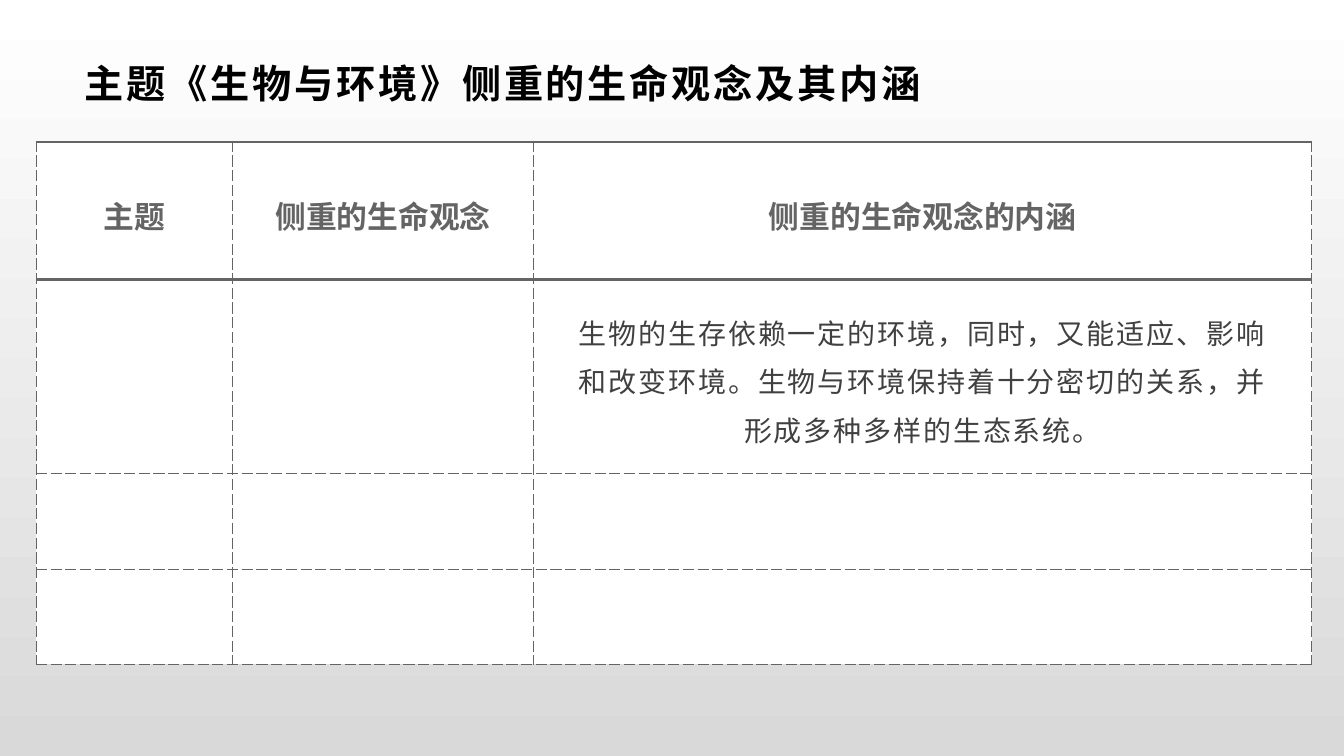
from lxml.etree import SubElement
from pptx import Presentation
from pptx.dml.color import RGBColor
from pptx.enum.text import MSO_ANCHOR as Anchor, MSO_AUTO_SIZE as AutoSize, PP_ALIGN as Align
from pptx.oxml.ns import qn
from pptx.util import Inches, Pt

# Content
TITLE = "主题《生物与环境》侧重的生命观念及其内涵"
ROWS = [
    ("主题", "侧重的生命观念", "侧重的生命观念的内涵"),
    ("", "", "生物的生存依赖一定的环境，同时，又能适应、影响和改变环境。"
             "生物与环境保持着十分密切的关系，并形成多种多样的生态系统。"),
    ("", "", ""),
    ("", "", ""),
]
COLUMN_WIDTHS = [1.95, 2.98, 7.72]
ROW_HEIGHTS = [1.36, 1.92, 0.95, 0.94]
TABLE_LEFT, TABLE_TOP = 0.36, 1.41

# Format
CJK_FONT = "Noto Sans CJK SC"
GRID = "646464"
THIN, THICK = (0.75, "dash"), (2.25, "solid")
HEADER_FORMAT = dict(size=22, color=GRID, bold=True, align=Align.CENTER, line_spacing=1.2)
BODY_FORMAT = dict(size=20, color="404040", spacing=1.3, align=Align.CENTER, line_spacing=1.2)


def rgb(color):
    return RGBColor.from_string(color)


def write(frame, text, *, size, color, font=CJK_FONT, bold=False, spacing=0,
          align=Align.LEFT, line_spacing=None):
    paragraph = frame.paragraphs[0]
    paragraph.alignment = align
    paragraph.line_spacing = line_spacing
    run = paragraph.add_run()
    run.text = text
    run.font.size = Pt(size)
    run.font.bold = bold
    run.font.color.rgb = rgb(color)
    run.font.name = font
    properties = run.font._element
    properties.set("spc", str(round(spacing * 100)))
    SubElement(properties, qn("a:ea")).set("typeface", CJK_FONT)


def set_margins(target, horizontal, vertical):
    target.margin_left = target.margin_right = Inches(horizontal)
    target.margin_top = target.margin_bottom = Inches(vertical)


def draw_border(cell, side, width, dash):
    line = SubElement(cell._tc.get_or_add_tcPr(), qn(f"a:ln{side}"), w=str(Pt(width)))
    fill = SubElement(line, qn("a:solidFill"))
    SubElement(fill, qn("a:srgbClr"), val=GRID)
    SubElement(line, qn("a:prstDash"), val=dash)


presentation = Presentation()
presentation.slide_width, presentation.slide_height = Inches(13.33), Inches(7.5)
slide = presentation.slides.add_slide(presentation.slide_layouts[5])

# Background: white fading down to grey
background = slide.background.fill
background.gradient()
background.gradient_angle = 270
for stop, color in zip(background.gradient_stops, ("FFFFFF", "D9D9D9")):
    stop.color.rgb = rgb(color)

# Title
title = slide.shapes.title
title.left, title.top, title.width, title.height = map(Inches, (0.73, 0.47, 11.87, 0.71))
title_frame = title.text_frame
title_frame.auto_size = AutoSize.NONE
title_frame.word_wrap = True
title_frame.vertical_anchor = Anchor.MIDDLE
set_margins(title_frame, 0.11, 0.04)
write(title_frame, TITLE, size=28, color="000000", font="Arial", bold=True, spacing=2)

# Table
table = slide.shapes.add_table(
    len(ROWS), len(COLUMN_WIDTHS), Inches(TABLE_LEFT), Inches(TABLE_TOP),
    Inches(sum(COLUMN_WIDTHS)), Inches(sum(ROW_HEIGHTS))).table
table.first_row = table.horz_banding = False
for column, width in zip(table.columns, COLUMN_WIDTHS):
    column.width = Inches(width)
for row, height in zip(table.rows, ROW_HEIGHTS):
    row.height = Inches(height)

# Cells: heavy rules above and below the header, dashed lines elsewhere
for row_index, texts in enumerate(ROWS):
    top = THICK if row_index < 2 else THIN
    bottom = THICK if row_index == 0 else THIN
    for column_index, text in enumerate(texts):
        cell = table.cell(row_index, column_index)
        for side, style in (("L", THIN), ("R", THIN), ("T", top), ("B", bottom)):
            draw_border(cell, side, *style)
        cell.fill.solid()
        cell.fill.fore_color.rgb = rgb("FFFFFF")
        cell.vertical_anchor = Anchor.MIDDLE
        set_margins(cell, 0.35, 0.24)
        if text:
            write(cell.text_frame, text, **(BODY_FORMAT if row_index else HEADER_FORMAT))

presentation.save("out.pptx")
